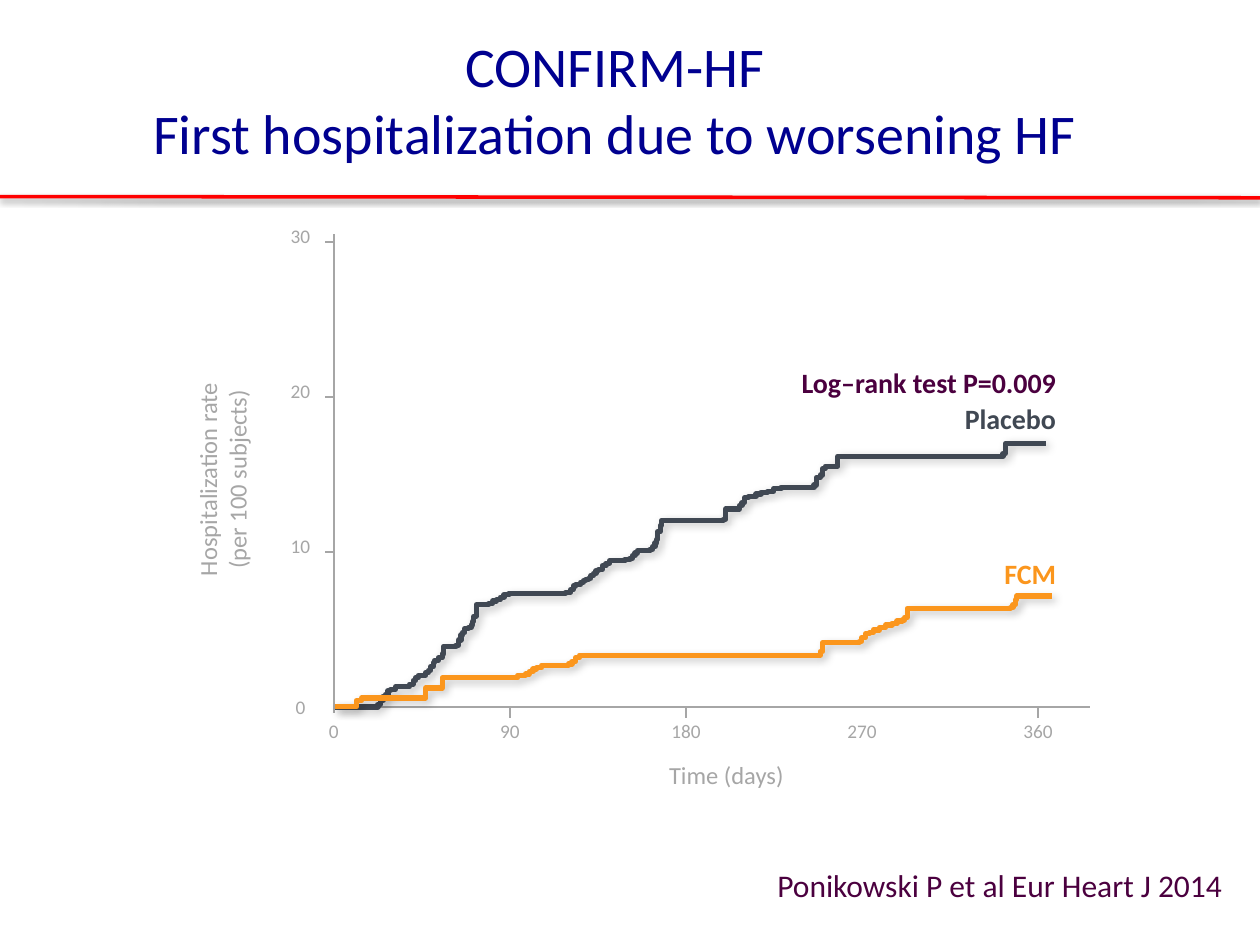
"""Builds a slide with two stepped hospitalization curves over one year."""
from lxml.etree import SubElement
from pptx import Presentation
from pptx.dml.color import RGBColor
from pptx.enum.shapes import MSO_CONNECTOR as CONN
from pptx.enum.text import MSO_ANCHOR as ANCHOR, PP_ALIGN as ALIGN
from pptx.oxml.ns import qn
from pptx.util import Inches, Pt

FONT = "Calibri"
NAVY, RED, GREY = "000090", "FF0000", "A6A6A6"
PLUM, SLATE, ORANGE = "4B003F", "404853", "FB961D"

TITLE = ["CONFIRM-HF", "First hospitalization due to worsening HF"]
SOURCE = "Ponikowski P et al Eur Heart J 2014"
X_TITLE = "Time (days)"
Y_TITLE = ["Hospitalization rate", "(per 100 subjects)"]
X_LABELS, X_TICKS = (0, 90, 180, 270, 360), (90, 180, 360)
Y_LABELS, Y_TICKS = (0, 10, 20, 30), (10, 20, 30)
X0, Y0 = 2.65, 5.61
PER_DAY, PER_EVENT = 1.397 / 90, 0.123

START = (2.66, 5.61)
PLACEBO = [
    (3, 5.59), (3.02, 5.56), (3.04, 5.53), (3.06, 5.51), (3.08, 5.48),
    (3.1, 5.47), (3.14, 5.45), (3.25, 5.43), (3.28, 5.4), (3.3, 5.38),
    (3.32, 5.36), (3.38, 5.34), (3.4, 5.32), (3.42, 5.29), (3.44, 5.26),
    (3.45, 5.24), (3.48, 5.22), (3.51, 5.19), (3.52, 5.13), (3.62, 5.12),
    (3.64, 5.08), (3.66, 5.04), (3.67, 5.02), (3.69, 4.99), (3.72, 4.98),
    (3.74, 4.96), (3.75, 4.93), (3.76, 4.89), (3.78, 4.8), (3.88, 4.79),
    (3.91, 4.77), (3.94, 4.76), (3.97, 4.74), (4, 4.72), (4.04, 4.71),
    (4.49, 4.7), (4.53, 4.68), (4.55, 4.65), (4.57, 4.64), (4.61, 4.62),
    (4.63, 4.61), (4.65, 4.6), (4.67, 4.59), (4.69, 4.57), (4.71, 4.55),
    (4.73, 4.53), (4.75, 4.52), (4.78, 4.49), (4.81, 4.47), (4.84, 4.45),
    (4.96, 4.44), (5, 4.43), (5.02, 4.41), (5.04, 4.39), (5.06, 4.37),
    (5.16, 4.36), (5.18, 4.34), (5.2, 4.31), (5.21, 4.28), (5.22, 4.22),
    (5.24, 4.17), (5.25, 4.13), (5.74, 4.12), (5.76, 4.04), (5.87, 4.01),
    (5.89, 3.99), (5.91, 3.95), (5.94, 3.94), (6, 3.92), (6.04, 3.91),
    (6.09, 3.9), (6.14, 3.88), (6.2, 3.87), (6.46, 3.85), (6.48, 3.79),
    (6.51, 3.77), (6.53, 3.72), (6.55, 3.7), (6.65, 3.62), (7.96, 3.6),
    (7.98, 3.52), (8.3, 3.52)]
FCM = [
    (2.83, 5.56), (2.87, 5.54), (3.38, 5.46), (3.51, 5.38), (4.11, 5.36),
    (4.17, 5.35), (4.2, 5.33), (4.23, 5.31), (4.26, 5.3), (4.3, 5.28),
    (4.51, 5.27), (4.54, 5.25), (4.57, 5.22), (4.6, 5.2), (6.51, 5.17),
    (6.53, 5.1), (6.82, 5.09), (6.84, 5.06), (6.87, 5.03), (6.9, 5.02),
    (6.93, 5), (6.98, 4.98), (7.03, 4.96), (7.08, 4.95), (7.12, 4.93),
    (7.16, 4.92), (7.18, 4.9), (7.2, 4.83), (8.02, 4.82), (8.04, 4.8),
    (8.06, 4.76), (8.07, 4.73), (8.35, 4.73)]
CURVES = [(PLACEBO, SLATE), (FCM, ORANGE)]
CURVE_LABELS = [("Placebo", SLATE, 3.14), ("FCM", ORANGE, 4.37),
                ("Log–rank test P=0.009", PLUM, 2.85)]


def rgb(color):
    """Turn a hex string into a colour."""
    return RGBColor.from_string(color)


def set_effect(s, shadow=None):
    """Give a shape only the shadow (alpha %, blur, distance, angle), or none."""
    effects = SubElement(s._element.spPr, qn("a:effectLst"))
    if shadow:
        alpha, blur, dist, angle = shadow
        outer = SubElement(effects, qn("a:outerShdw"), blurRad=str(Pt(blur)),
                           dist=str(Pt(dist)), dir=str(angle * 60000),
                           rotWithShape="0")
        black = SubElement(outer, qn("a:srgbClr"), val="000000")
        SubElement(black, qn("a:alpha"), val=str(alpha * 1000))


def add_line(shapes, x1, y1, x2, y2, color=GREY, width=1.5, shadow=None):
    """Draw a straight line."""
    s = shapes.add_connector(CONN.STRAIGHT, *map(Inches, (x1, y1, x2, y2)))
    s.line.color.rgb = rgb(color)
    s.line.width = Pt(width)
    set_effect(s, shadow)


def add_curve(shapes, steps, color):
    """Draw a stepped curve, going across and then up at each step."""
    points, y_before = [], START[1]
    for x, y in steps:
        points += [(Inches(x), Inches(y_before)), (Inches(x), Inches(y))]
        y_before = y
    builder = shapes.build_freeform(*map(Inches, START))
    builder.add_line_segments(points, close=False)
    s = builder.convert_to_shape()
    s.fill.background()
    s.line.color.rgb = rgb(color)
    s.line.width = Pt(3)
    set_effect(s, (23, 5, 2, 45))


def add_text(shapes, box, lines, size, color, align=ALIGN.CENTER, bold=False,
             anchor=ANCHOR.TOP, rotation=0):
    """Place a text box with one paragraph for each line."""
    s = shapes.add_textbox(*map(Inches, box))
    s.rotation = rotation
    tf = s.text_frame
    tf.word_wrap = True
    tf.vertical_anchor = anchor
    for i, line in enumerate(lines):
        p = tf.add_paragraph() if i else tf.paragraphs[0]
        p.alignment = align
        r = p.add_run()
        r.text = line
        r.font.name, r.font.size, r.font.bold = FONT, Pt(size), bold
        r.font.color.rgb = rgb(color)


def main():
    """Build and save the slide."""
    prs = Presentation()
    prs.slide_width, prs.slide_height = Inches(10), Inches(7.5)
    shapes = prs.slides.add_slide(prs.slide_layouts[6]).shapes

    add_text(shapes, (0.38, 0.06, 9, 1.44), TITLE, 32, NAVY,
             anchor=ANCHOR.MIDDLE)
    add_text(shapes, (5.64, 6.82, 4.16, 0.4), [SOURCE], 18, PLUM, ALIGN.RIGHT,
             anchor=ANCHOR.MIDDLE)
    add_line(shapes, 0, 1.56, 10, 1.57, RED, 2, (38, 3.1, 1.6, 90))

    add_line(shapes, X0, 1.86, X0, 5.66)
    add_line(shapes, X0, Y0, 8.65, Y0)
    for day in X_TICKS:
        x = X0 + day * PER_DAY
        add_line(shapes, x, Y0, x, Y0 + 0.09)
    for rate in Y_TICKS:
        y = Y0 - rate * PER_EVENT
        add_line(shapes, X0 - 0.07, y, X0, y)
    for day in X_LABELS:
        box = (X0 + day * PER_DAY - 0.34, 5.66, 0.68, 0.28)
        add_text(shapes, box, [str(day)], 11, GREY)
    for rate in Y_LABELS:
        lift = 0.19 if rate else 0.14
        box = (2.13, Y0 - rate * PER_EVENT - lift, 0.51, 0.28)
        add_text(shapes, box, [str(rate)], 11, GREY)
    add_text(shapes, (2.63, 5.98, 6.27, 0.34), [X_TITLE], 14, GREY)
    add_text(shapes, (-0.12, 3.52, 3.77, 0.57), Y_TITLE, 14, GREY, rotation=270)

    for steps, color in CURVES:
        add_curve(shapes, steps, color)
    for label, color, top in CURVE_LABELS:
        add_text(shapes, (5.51, top, 2.97, 0.37), [label], 16, color,
                 ALIGN.RIGHT, bold=True)
    prs.save("out.pptx")


if __name__ == "__main__":
    main()
